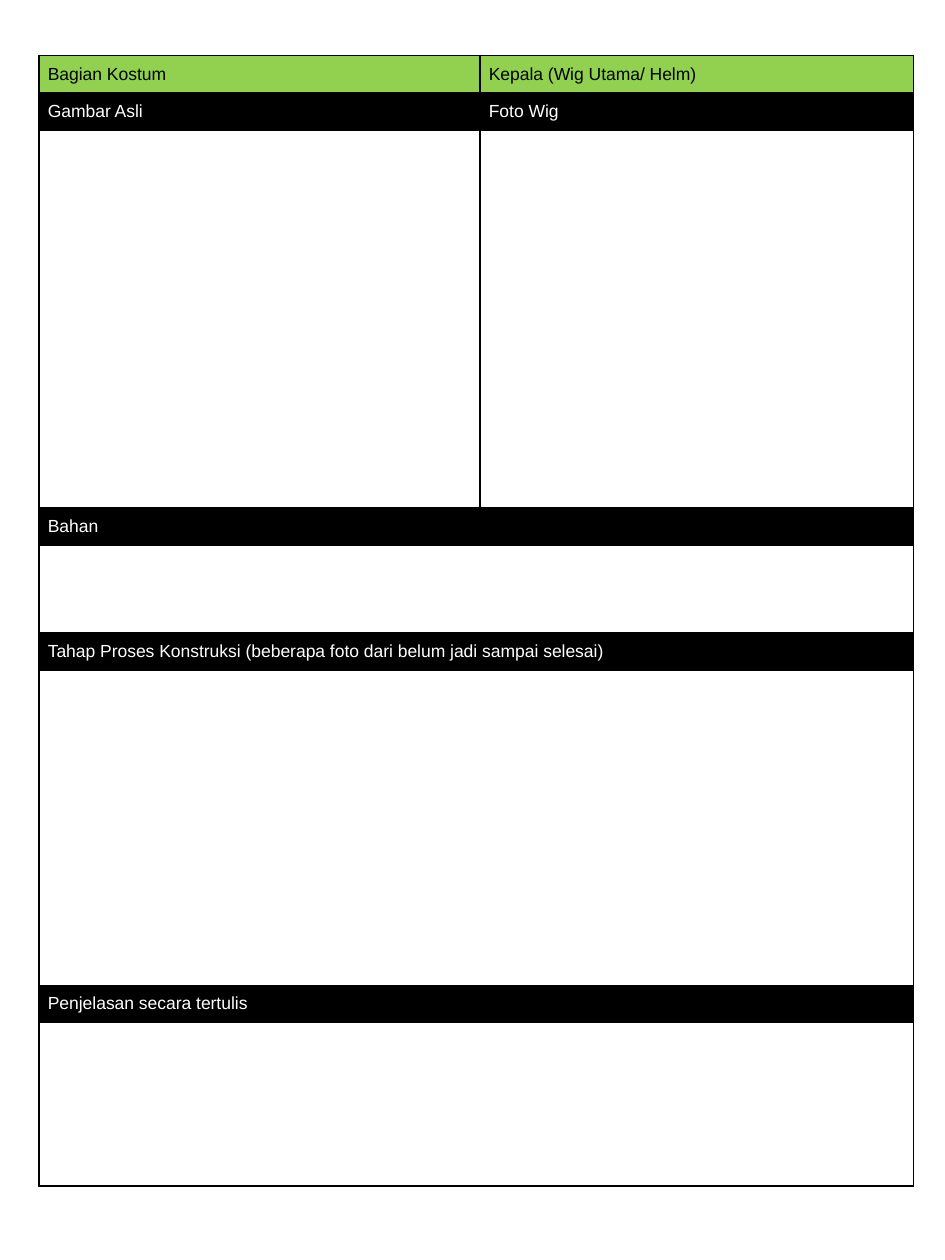
from pptx import Presentation
from pptx.util import Inches, Pt
from pptx.dml.color import RGBColor
from pptx.oxml import parse_xml
from pptx.oxml.ns import nsdecls


def color(code):
    return RGBColor.from_string(code)


def border(cell):
    props = cell._tc.get_or_add_tcPr()
    for side in ("lnL", "lnR", "lnT", "lnB"):
        props.append(parse_xml(
            f'<a:{side} {nsdecls("a")} w="12700"><a:solidFill>'
            f'<a:srgbClr val="000000"/></a:solidFill></a:{side}>'))


deck = Presentation()
deck.slide_width = Inches(7.5)
deck.slide_height = Inches(10)
slide = deck.slides.add_slide(deck.slide_layouts[6])

bar = 0.29
rows = [
    (bar, "92D050", "000000", ["Bagian Kostum", "Kepala (Wig Utama/ Helm)"]),
    (bar, "000000", "FFFFFF", ["Gambar Asli", "Foto Wig"]),
    (3, None, None, ["", ""]),
    (bar, "000000", "FFFFFF", ["Bahan"]),
    (0.7, None, None, [""]),
    (bar, "000000", "FFFFFF",
     ["Tahap Proses Konstruksi (beberapa foto dari belum jadi sampai selesai)"]),
    (2.5, None, None, [""]),
    (bar, "000000", "FFFFFF", ["Penjelasan secara tertulis"]),
    (1.3, None, None, [""]),
]
widths = [3.5, 3.44]
total = sum(row[0] for row in rows)

table = slide.shapes.add_table(
    len(rows), len(widths), Inches(0.31), Inches(0.44),
    Inches(sum(widths)), Inches(total)).table
table.first_row = False
table.horz_banding = False
for col, width in zip(table.columns, widths):
    col.width = Inches(width)

for line, (height, fill, ink, texts) in enumerate(rows):
    table.rows[line].height = Inches(height)
    for cell in table.rows[line].cells:
        border(cell)
        cell.margin_left = cell.margin_right = Inches(0.07)
        cell.margin_top = cell.margin_bottom = Inches(0.07)
        if fill:
            cell.fill.solid()
            cell.fill.fore_color.rgb = color(fill)
        else:
            cell.fill.background()
    if len(texts) == 1:
        table.cell(line, 0).merge(table.cell(line, 1))
    for spot, text in enumerate(texts):
        if text:
            cell = table.cell(line, spot)
            cell.text = text
            font = cell.text_frame.paragraphs[0].font
            font.name = "Arial"
            font.size = Pt(10)
            font.color.rgb = color(ink)

deck.save("out.pptx")
